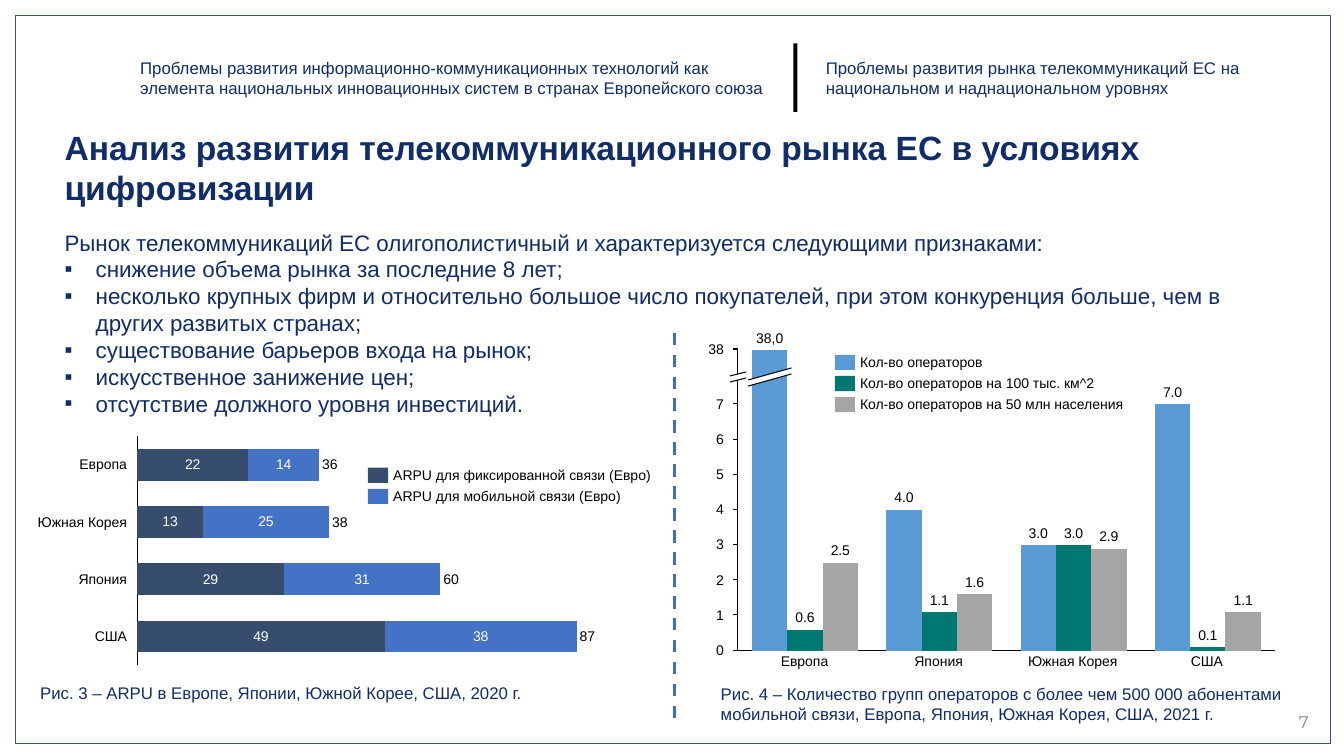
"""Build a slide on the EU telecommunications market with two charts."""
import pptx
import pptx.chart.data
import pptx.dml.color
import pptx.enum.chart
import pptx.enum.dml
import pptx.enum.shapes
import pptx.enum.text
import pptx.oxml
import pptx.oxml.ns
import pptx.util

Inches = pptx.util.Inches
Pt = pptx.util.Pt
RGB = pptx.dml.color.RGBColor.from_string
ALIGN = pptx.enum.text.PP_ALIGN
ANCHOR = pptx.enum.text.MSO_ANCHOR
CHART = pptx.enum.chart
NAMESPACES = pptx.oxml.ns.nsdecls("a", "c")
COLORS = {
    "navy": "102D69", "border": "32538F", "divider": "3F6FC3", "number": "888888",
    "black": "000000", "white": "FFFFFF", "operators": "5B9BD5", "area": "007770",
    "population": "A5A5A5", "fixed": "364D6E", "mobile": "4472C4",
}

deck = pptx.Presentation()
deck.slide_width, deck.slide_height = Inches(13.33), Inches(7.5)
page = deck.slides.add_slide(deck.slide_layouts[6])


def write(text, left, top, width, height, size=10, color="black", font="Arial", bold=False,
          align=ALIGN.LEFT, anchor=ANCHOR.TOP, inset=0.05, wrap=True, spacing=None, bullets=()):
    box = page.shapes.add_textbox(Inches(left), Inches(top), Inches(width), Inches(height))
    frame = box.text_frame
    frame.word_wrap = wrap
    frame.vertical_anchor = anchor
    frame.margin_left = frame.margin_right = Inches(inset)
    frame.margin_top = frame.margin_bottom = Inches(min(inset, 0.05))
    for index, line in enumerate([text, *bullets]):
        para = frame.add_paragraph() if index else frame.paragraphs[0]
        para.alignment = align
        if spacing:
            para.line_spacing = spacing
        if index:
            settings = para._p.get_or_add_pPr()
            settings.set("marL", str(Inches(0.31)))
            settings.set("indent", str(-Inches(0.31)))
            for tag in ('buFont typeface="Arial"', 'buChar char="▪"'):
                settings.append(pptx.oxml.parse_xml(f"<a:{tag} {NAMESPACES}/>"))
        span = para.add_run()
        span.text = line
        span.font.name, span.font.size, span.font.bold = font, Pt(size), bold
        span.font.color.rgb = RGB(COLORS[color])


def draw_line(left, top, right, bottom, color="black", width=0.75, dash=None):
    line = page.shapes.add_connector(
        pptx.enum.shapes.MSO_CONNECTOR.STRAIGHT,
        Inches(left), Inches(top), Inches(right), Inches(bottom))
    line.line.color.rgb = RGB(COLORS[color])
    line.line.width = Pt(width)
    if dash:
        line.line.dash_style = dash
    line._element.spPr.append(pptx.oxml.parse_xml(f"<a:effectLst {NAMESPACES}/>"))


legend = [
    (8.28, 3.52, "operators", "Кол-во операторов"),
    (8.28, 3.73, "area", "Кол-во операторов на 100 тыс. км^2"),
    (8.28, 3.94, "population", "Кол-во операторов на 50 млн населения"),
    (3.65, 4.64, "fixed", "ARPU для фиксированной связи (Евро)"),
    (3.65, 4.85, "mobile", "ARPU для мобильной связи (Евро)"),
]
names = {color: label for left, top, color, label in legend}
charts = [
    dict(kind=CHART.XL_CHART_TYPE.COLUMN_CLUSTERED, place=(7.23, 3.38, 5.51, 3.17),
         plot=(0.016, 0.028, 0.967, 0.943), top=8.56, format="0.0", label="black",
         position=CHART.XL_LABEL_POSITION.OUTSIDE_END, overlap=0,
         countries=["Европа", "Япония", "Южная Корея", "США"],
         series={"operators": (8.6, 4, 3, 7), "area": (0.6, 1.1, 3, 0.1),
                 "population": (2.5, 1.6, 2.9, 1.1)}),
    dict(kind=CHART.XL_CHART_TYPE.BAR_STACKED, place=(1.27, 4.24, 4.54, 2.45),
         plot=(0.02, 0.037, 0.96, 0.926), top=87, format="0", label="white",
         position=CHART.XL_LABEL_POSITION.CENTER, overlap=100,
         countries=["Европа", "Южная Корея", "Япония", "США"],
         series={"fixed": (22, 13, 29, 49), "mobile": (14, 25, 31, 38)}),
]
operators, arpu = charts

rectangles = [(0.15, 0.15, 13.04, 7.22, "white"), (7.87, 0.43, 0.04, 0.68, "black")]
rectangles += [(left, top, 0.2, 0.15, color) for left, top, color, label in legend]
swatches = []
for left, top, width, height, color in rectangles:
    shape = page.shapes.add_shape(pptx.enum.shapes.MSO_SHAPE.RECTANGLE,
                                  Inches(left), Inches(top), Inches(width), Inches(height))
    shape.shadow.inherit = False
    shape.fill.solid()
    shape.fill.fore_color.rgb = RGB(COLORS[color])
    if color == "white":
        shape.line.color.rgb = RGB(COLORS["border"])
        shape.line.width = Pt(0.25)
    else:
        shape.line.fill.background()
    if color in names:
        swatches.append(shape)

write("Проблемы развития информационно-коммуникационных технологий как элемента национальных "
      "инновационных систем в странах Европейского союза",
      1.34, 0.52, 6.41, 0.5, size=12, color="navy")
write("Проблемы развития рынка телекоммуникаций ЕС на национальном и наднациональном уровнях",
      8.14, 0.52, 4.59, 0.5, size=12, color="navy")
write("Анализ развития телекоммуникационного рынка ЕС в условиях цифровизации",
      0.59, 1.21, 10.98, 0.91, size=24, color="navy", bold=True)
write("Рынок телекоммуникаций ЕС олигополистичный и характеризуется следующими признаками:",
      0.59, 2.22, 12.14, 2.37, size=16, color="navy", bullets=[
          "снижение объема рынка за последние 8 лет;",
          "несколько крупных фирм и относительно большое число покупателей, при этом "
          "конкуренция больше, чем в других развитых странах;",
          "существование барьеров входа на рынок;",
          "искусственное занижение цен;",
          "отсутствие должного уровня инвестиций."])
write("7", 12.73, 7.02, 0.3, 0.29, size=12, color="number", font="Montserrat",
      align=ALIGN.RIGHT, anchor=ANCHOR.MIDDLE, wrap=False)

for details in charts:
    data = pptx.chart.data.CategoryChartData(number_format=details["format"])
    data.categories = details["countries"]
    for color, values in details["series"].items():
        data.add_series(names[color], values)
    place = [Inches(length) for length in details["place"]]
    chart = page.shapes.add_chart(details["kind"], *place, data).chart
    chart.has_legend = chart.has_title = False
    chart.font.name, chart.font.size = "Arial", Pt(10)
    chart.font.color.rgb = RGB(COLORS["black"])
    for axis in (chart.category_axis, chart.value_axis):
        axis.has_major_gridlines = False
        axis.major_tick_mark = axis.minor_tick_mark = CHART.XL_TICK_MARK.NONE
        axis.tick_label_position = CHART.XL_TICK_LABEL_POSITION.NONE
        axis.format.line.color.rgb = RGB(COLORS["black"])
        axis.format.line.width = Pt(0.75)
    chart.value_axis.minimum_scale, chart.value_axis.maximum_scale = 0, details["top"]
    chart.value_axis.visible = details is operators
    chart.category_axis.reverse_order = details is arpu
    bars = chart.plots[0]
    bars.gap_width, bars.overlap, bars.vary_by_categories = 80, details["overlap"], False
    for color, series in zip(details["series"], bars.series):
        series.format.fill.solid()
        series.format.fill.fore_color.rgb = RGB(COLORS[color])
        labels = series.data_labels
        labels.show_value = True
        labels.position = details["position"]
        labels.number_format, labels.number_format_is_linked = details["format"], False
        labels.font.name, labels.font.size = "Arial", Pt(10)
        labels.font.color.rgb = RGB(COLORS[details["label"]])
        if color == "operators":
            labels._element.insert(0, pptx.oxml.parse_xml(
                f'<c:dLbl {NAMESPACES}><c:idx val="0"/><c:delete val="1"/></c:dLbl>'))
    area = chart._chartSpace.chart.plotArea
    for layout in area.findall(pptx.oxml.ns.qn("c:layout")):
        area.remove(layout)
    sizes = "".join(f'<c:{tag} val="{value}"/>' for tag, value in zip("xywh", details["plot"]))
    area.insert(0, pptx.oxml.parse_xml(
        f'<c:layout {NAMESPACES}><c:manualLayout><c:layoutTarget val="inner"/>'
        f'<c:xMode val="edge"/><c:yMode val="edge"/>{sizes}</c:manualLayout></c:layout>'))

for shape in swatches:
    page.shapes._spTree.append(shape._element)

small = dict(inset=0, wrap=False, spacing=0.85)
for value, label in [*((value, str(value)) for value in range(8)), (8.56, "38")]:
    height = 6.45 - 0.349 * value
    draw_line(7.32, height, 7.27, height)
    write(label, 6.93, height - 0.06, 0.25, 0.14, align=ALIGN.RIGHT, anchor=ANCHOR.MIDDLE, **small)

for left, top, width, rise in [(7.42, 3.77, 0.43, 0.12), (7.24, 3.73, 0.16, 0.04)]:
    right = left + width
    corners = [(right, top - rise), (right, top - rise + 0.06), (left, top + 0.06)]
    outline = page.shapes.build_freeform(Inches(left), Inches(top))
    outline.add_line_segments([(Inches(x), Inches(y)) for x, y in corners], close=True)
    gap = outline.convert_to_shape()
    gap.shadow.inherit = False
    gap.fill.solid()
    gap.fill.fore_color.rgb = RGB(COLORS["white"])
    gap.line.fill.background()
    for edge in (top, top + 0.06):
        draw_line(left, edge, right, edge - rise)

write("38,0", 7.43, 3.3, 0.41, 0.14, align=ALIGN.CENTER, anchor=ANCHOR.BOTTOM, **small)
for index, country in enumerate(operators["countries"]):
    write(country, 7.48 + 1.33 * index, 6.5, 1, 0.14, align=ALIGN.CENTER, **small)
for index, country in enumerate(arpu["countries"]):
    top = 4.55 + 0.567 * index
    total = sum(values[index] for values in arpu["series"].values())
    write(country, 0.26, top, 1, 0.14, align=ALIGN.RIGHT, anchor=ANCHOR.MIDDLE, **small)
    write(str(total), 1.39 + 4.36 * total / 87, top, 0.25, 0.14, anchor=ANCHOR.MIDDLE, **small)
for left, top, color, label in legend:
    write(label, left + 0.25, top + 0.01, 2.75, 0.14, anchor=ANCHOR.MIDDLE, **small)

write("Рис. 4 – Количество групп операторов с более чем 500 000 абонентами мобильной связи, "
      "Европа, Япония, Южная Корея, США, 2021 г.",
      7.05, 6.73, 6.15, 0.51, size=12, color="navy", inset=0.1)
write("Рис. 3 – ARPU в Европе, Японии, Южной Корее, США, 2020 г.",
      0.3, 6.72, 6.67, 0.3, size=12, color="navy", inset=0.1)
draw_line(6.69, 3.3, 6.69, 7.14, color="divider", width=2.25,
          dash=pptx.enum.dml.MSO_LINE.DASH)
deck.save("out.pptx")
